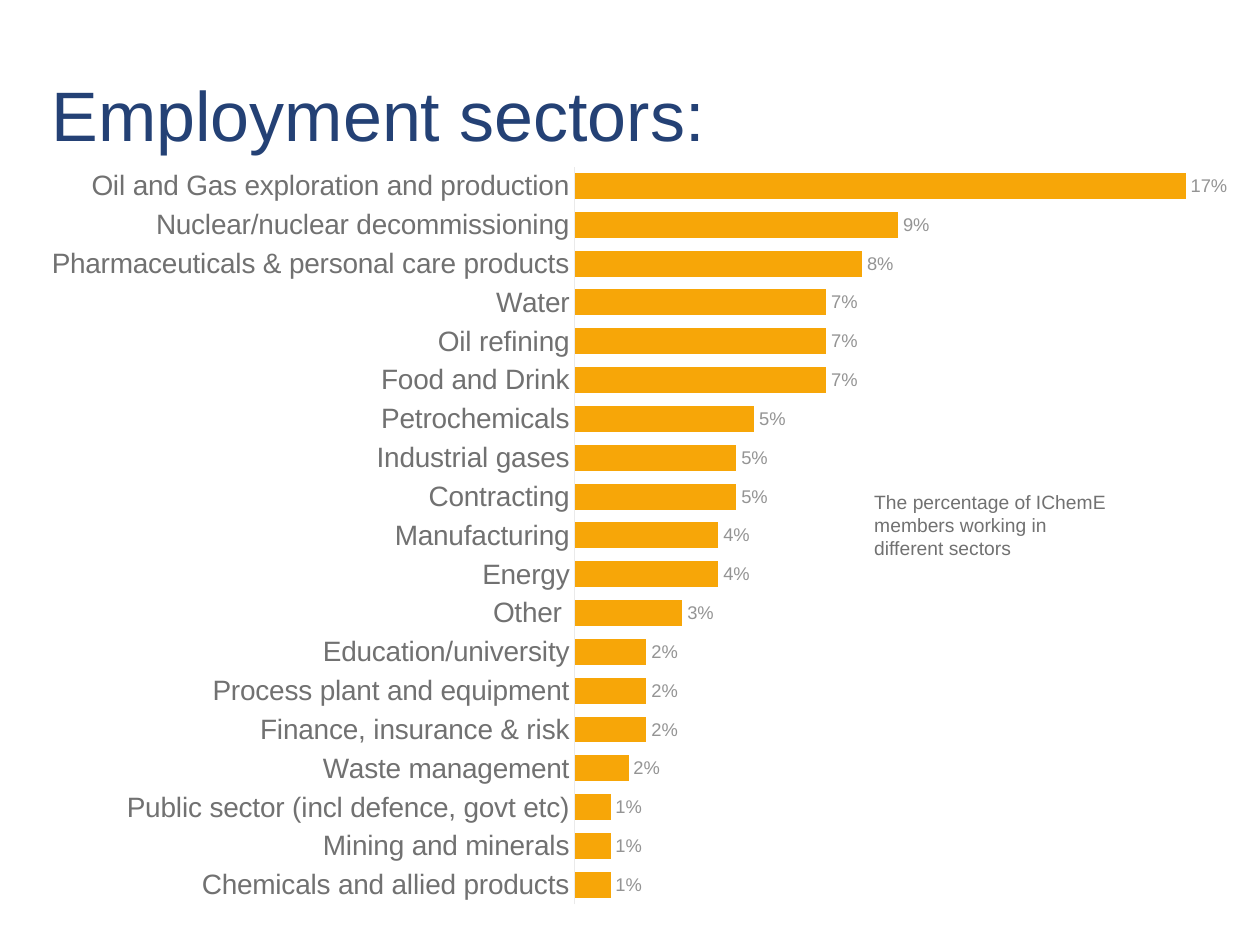
from lxml import etree
from pptx import Presentation
from pptx import util as u
from pptx.chart.data import CategoryChartData
from pptx.dml.color import RGBColor
from pptx.enum import chart as ch, text as tx
from pptx.oxml import ns

Pt = u.Pt
THEME = {
    "font": "Arial",
    "title": {"size": 40, "color": "244175"},
    "note": {"size": 11, "color": "717171"},
    "chart": {"size": 10, "color": "717171"},
    "category": {"size": 16, "color": "717171"},
    "label": {"size": 10.5, "color": "949494"},
    "bar": "F7A608",
    "axis": "EAEAEA",
}
SECTORS = [
    ("Oil and Gas exploration and production", 0.17),
    ("Nuclear/nuclear decommissioning", 0.09),
    ("Pharmaceuticals & personal care products", 0.08),
    ("Water", 0.07),
    ("Oil refining", 0.07),
    ("Food and Drink", 0.07),
    ("Petrochemicals", 0.05),
    ("Industrial gases", 0.045),
    ("Contracting", 0.045),
    ("Manufacturing", 0.04),
    ("Energy", 0.04),
    ("Other ", 0.03),
    ("Education/university", 0.02),
    ("Process plant and equipment", 0.02),
    ("Finance, insurance & risk", 0.02),
    ("Waste management", 0.015),
    ("Public sector (incl defence, govt etc)", 0.01),
    ("Mining and minerals", 0.01),
    ("Chemicals and allied products", 0.01),
]
PLOT_AREA = {"x": 0.45, "y": 0.02, "w": 0.53, "h": 0.96}


def style_font(font, role):
    font.name = THEME["font"]
    font.size = Pt(THEME[role]["size"])
    font.bold = False
    font.color.rgb = RGBColor.from_string(THEME[role]["color"])


def fill_box(box, place, words, role, top_inset):
    """Place a text box or placeholder and write one paragraph in it."""
    for name, value in zip(("left", "top", "width", "height"), place):
        setattr(box, name, Pt(value))
    frame = box.text_frame
    settings = {
        "word_wrap": True,
        "auto_size": tx.MSO_AUTO_SIZE.NONE,
        "vertical_anchor": tx.MSO_ANCHOR.TOP,
        "margin_top": Pt(top_inset),
    }
    for name, value in settings.items():
        setattr(frame, name, value)
    para = frame.paragraphs[0]
    para.alignment = tx.PP_ALIGN.LEFT
    span = para.add_run()
    span.text = words
    style_font(span.font, role)


deck = Presentation()
deck.slide_width, deck.slide_height = Pt(720), Pt(540)
page = deck.slides.add_slide(deck.slide_layouts[5])

fill_box(page.shapes.title, (22.3, 33.8, 674.6, 78.5), "Employment sectors:", "title", 7)

# Bar charts list categories from the bottom up.
data = CategoryChartData(number_format="0%")
for sector, share in reversed(SECTORS):
    data.add_category(sector)
data.add_series("Series 1", [share for sector, share in reversed(SECTORS)])
chart = page.shapes.add_chart(
    ch.XL_CHART_TYPE.BAR_CLUSTERED, Pt(14.4), Pt(86.4), Pt(697.7), Pt(439.2), data
).chart
chart.has_legend = False
chart.has_title = False
style_font(chart.font, "chart")

category_axis = chart.category_axis
category_axis.major_tick_mark = ch.XL_TICK_MARK.NONE
category_axis.format.line.width = Pt(0.75)
category_axis.format.line.color.rgb = RGBColor.from_string(THEME["axis"])
style_font(category_axis.tick_labels.font, "category")

value_axis = chart.value_axis
axis_settings = {
    "minimum_scale": 0,
    "maximum_scale": 0.18,
    "has_major_gridlines": False,
    "visible": False,
}
for name, value in axis_settings.items():
    setattr(value_axis, name, value)

plot = chart.plots[0]
plot.gap_width = 50
plot.vary_by_categories = False
bars = plot.series[0]
bars.format.fill.solid()
bars.format.fill.fore_color.rgb = RGBColor.from_string(THEME["bar"])
labels = bars.data_labels
label_settings = {
    "show_value": True,
    "number_format": "0%",
    "number_format_is_linked": False,
    "position": ch.XL_LABEL_POSITION.OUTSIDE_END,
}
for name, value in label_settings.items():
    setattr(labels, name, value)
style_font(labels.font, "label")

# Fix the bar area so that all category names fit on one line.
plot_area = chart.element.find(".//" + ns.qn("c:plotArea"))
layout = plot_area.find(ns.qn("c:layout"))
if layout is None:
    layout = etree.Element(ns.qn("c:layout"))
    plot_area.insert(0, layout)
manual = etree.SubElement(layout, ns.qn("c:manualLayout"))
entries = {"layoutTarget": "inner", "xMode": "edge", "yMode": "edge", **PLOT_AREA}
for name, value in entries.items():
    etree.SubElement(manual, ns.qn("c:" + name)).set("val", str(value))

note = page.shapes.add_textbox(0, 0, 0, 0)
fill_box(
    note,
    (492.5, 276.5, 153.4, 47.5),
    "The percentage of IChemE members working in different sectors",
    "note",
    3.6,
)

deck.save("out.pptx")
